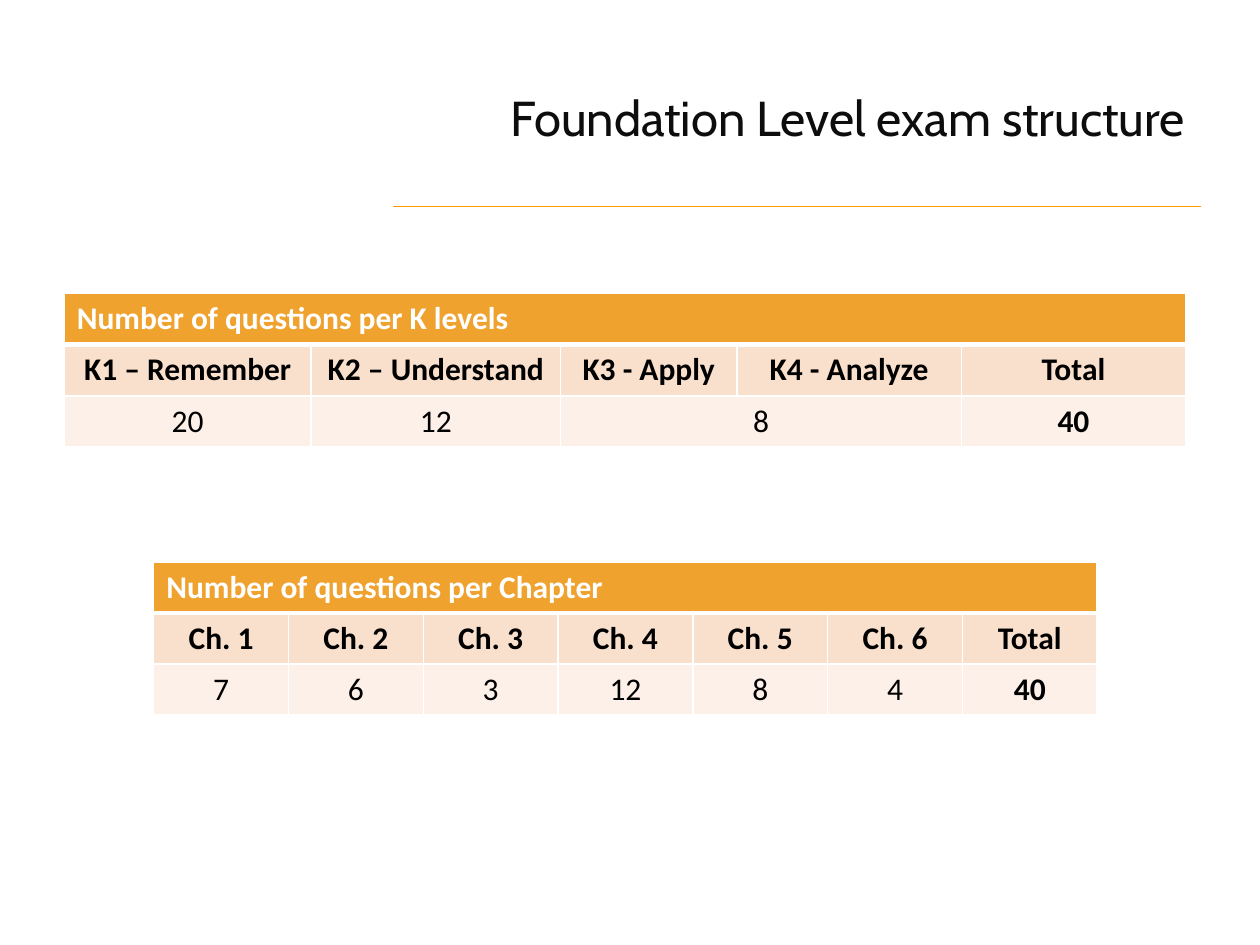
from dataclasses import dataclass

import lxml.etree
import pptx
import pptx.dml.color
import pptx.enum.text
import pptx.oxml.ns
import pptx.util

Inches = pptx.util.Inches
Pt = pptx.util.Pt
Align = pptx.enum.text.PP_ALIGN
qn = pptx.oxml.ns.qn


@dataclass(frozen=True)
class Theme:
    """Colours, fonts and type sizes of the slide."""

    title_font: str = "Cabin"
    table_font: str = "Calibri"
    title_size: int = 28
    table_size: int = 18
    title_color: str = "0D0D0D"
    rule_color: str = "FF9900"
    border_color: str = "FFFFFF"
    row_fills: tuple = ("F0A22E", "F9E0CD", "FCF0E8")
    row_colors: tuple = ("FFFFFF", "000000", "000000")


class SlideBuilder:
    """Adds styled elements to the current slide."""

    def __init__(self, slide, theme):
        """Keep the slide and its theme."""
        self.slide = slide
        self.theme = theme

    def color(self, value):
        """Turn a hex string into a colour."""
        return pptx.dml.color.RGBColor.from_string(value)

    def format_runs(self, paragraph, font, size, color, bold=False):
        """Set the font of every run in a paragraph."""
        for run in paragraph.runs:
            run.font.name = font
            run.font.size = Pt(size)
            run.font.bold = bold
            run.font.color.rgb = self.color(color)

    def title(self, text, left, top, width, height):
        """Place and format the title placeholder."""
        shape = self.slide.shapes.title
        shape.left, shape.top = Inches(left), Inches(top)
        shape.width, shape.height = Inches(width), Inches(height)
        frame = shape.text_frame
        frame.text = text
        frame.vertical_anchor = pptx.enum.text.MSO_ANCHOR.MIDDLE
        paragraph = frame.paragraphs[0]
        paragraph.alignment = Align.RIGHT
        theme = self.theme
        self.format_runs(paragraph, theme.title_font, theme.title_size, theme.title_color)

    def rule(self, left, right, top):
        """Draw a thin horizontal rule."""
        connector = self.slide.shapes.add_connector(
            pptx.enum.shapes.MSO_CONNECTOR.STRAIGHT,
            Inches(left), Inches(top), Inches(right), Inches(top),
        )
        connector.line.color.rgb = self.color(self.theme.rule_color)
        connector.line.width = Pt(0.75)
        properties = connector._element.spPr
        lxml.etree.SubElement(properties, qn("a:effectLst"))

    def borders(self, cell, widths):
        """Set the left, right, top and bottom borders of a cell."""
        properties = cell._tc.get_or_add_tcPr()
        for index, (side, width) in enumerate(zip("LRTB", widths)):
            line = properties.makeelement(qn(f"a:ln{side}"), {"w": str(Pt(width))})
            fill = lxml.etree.SubElement(line, qn("a:solidFill"))
            lxml.etree.SubElement(fill, qn("a:srgbClr"), val=self.theme.border_color)
            properties.insert(index, line)

    def table(self, left, top, column_widths, row_height, rows):
        """Add a table in which None extends the cell to its left."""
        theme = self.theme
        table = self.slide.shapes.add_table(
            len(rows), len(column_widths), Inches(left), Inches(top),
            Inches(sum(column_widths)), Inches(row_height * len(rows)),
        ).table
        for column, width in zip(table.columns, column_widths):
            column.width = Inches(width)
        for row_index, values in enumerate(rows):
            table.rows[row_index].height = Inches(row_height)
            top_width = 3 if row_index == 1 else 1
            bottom_width = 3 if row_index == 0 else 1
            for column_index, value in enumerate(values):
                cell = table.cell(row_index, column_index)
                cell.fill.solid()
                cell.fill.fore_color.rgb = self.color(theme.row_fills[row_index])
                self.borders(cell, (1, 1, top_width, bottom_width))
                if value is None:
                    continue
                end = column_index
                while end + 1 < len(values) and values[end + 1] is None:
                    end += 1
                if end > column_index:
                    cell.merge(table.cell(row_index, end))
                cell.text_frame.text = value
                paragraph = cell.text_frame.paragraphs[0]
                paragraph.alignment = Align.CENTER if row_index else Align.LEFT
                bold = row_index < 2 or end == len(values) - 1
                self.format_runs(
                    paragraph, theme.table_font, theme.table_size,
                    theme.row_colors[row_index], bold,
                )


def main():
    """Build the exam structure slide."""
    presentation = pptx.Presentation()
    presentation.slide_width = Inches(10)
    presentation.slide_height = Inches(7.5)
    slide = presentation.slides.add_slide(presentation.slide_layouts[5])
    builder = SlideBuilder(slide, Theme())
    builder.rule(3.12, 9.53, 1.64)
    builder.title("Foundation Level exam structure", 3.2, 0.3, 6.3, 1.25)
    builder.table(0.51, 2.33, [1.96, 1.98, 1.4, 1.78, 1.78], 0.4, [
        ["Number of questions per K levels"] + [None] * 4,
        ["K1 – Remember", "K2 – Understand", "K3 - Apply", "K4 - Analyze", "Total"],
        ["20", "12", "8", None, "40"],
    ])
    builder.table(1.22, 4.46, [1.07] * 7, 0.4, [
        ["Number of questions per Chapter"] + [None] * 6,
        [f"Ch. {number}" for number in range(1, 7)] + ["Total"],
        ["7", "6", "3", "12", "8", "4", "40"],
    ])
    presentation.save("out.pptx")


if __name__ == "__main__":
    main()
